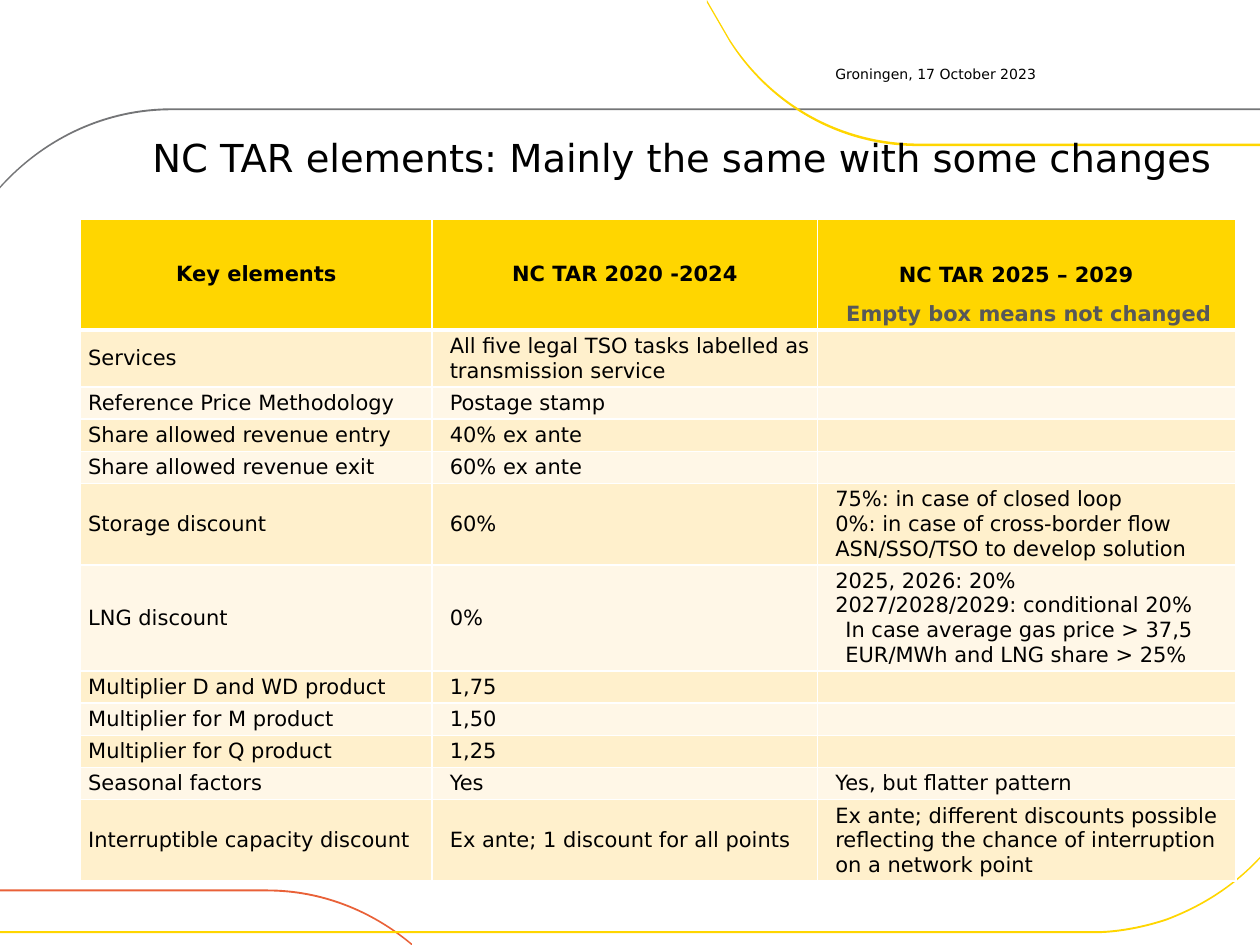
from lxml.etree import SubElement
from pptx import Presentation
from pptx.dml.color import RGBColor
from pptx.enum.text import MSO_ANCHOR, PP_ALIGN
from pptx.oxml.ns import qn
from pptx.util import Inches, Pt

FONT = "DejaVu Sans"
BLACK = RGBColor(0x00, 0x00, 0x00)
WHITE = RGBColor(0xFF, 0xFF, 0xFF)
GREY = RGBColor(0x74, 0x75, 0x77)
DARK_GREY = RGBColor(0x57, 0x58, 0x59)
YELLOW = RGBColor(0xFF, 0xD6, 0x00)
ORANGE = RGBColor(0xE9, 0x61, 0x38)
BAND_DARK = RGBColor(0xFF, 0xF0, 0xCC)
BAND_LIGHT = RGBColor(0xFF, 0xF7, 0xE7)

presentation = Presentation()
presentation.slide_width = Inches(10)
presentation.slide_height = Inches(7.5)
slide = presentation.slides.add_slide(presentation.slide_layouts[6])


def write_text(frame, text, size=12, color=BLACK, bold=False, align=PP_ALIGN.LEFT,
               indent=0, space_after=0, new=False):
    """Write one paragraph, either the first of the frame or a new one."""
    paragraph = frame.add_paragraph() if new else frame.paragraphs[0]
    paragraph.alignment = align
    paragraph.space_after = Pt(space_after)
    paragraph._p.get_or_add_pPr().set("marL", str(Inches(indent)))
    if text:
        run = paragraph.add_run()
        run.text = text
        run.font.name = FONT
        run.font.size = Pt(size)
        run.font.bold = bold
        run.font.color.rgb = color
    else:
        # Small enough that an empty cell does not stretch its row
        paragraph._p.get_or_add_endParaRPr().set("sz", "1000")


def draw_ribbon(edge, thickness, color):
    """Fill a thin band below an edge of Bezier curves (a start, then point triples)."""
    outline = edge + [(x, y + thickness) for x, y in reversed(edge)]
    points = [(Inches(x), Inches(y)) for x, y in outline]
    builder = slide.shapes.build_freeform(*points[0])
    builder.add_line_segments(points[1:], close=True)
    shape = builder.convert_to_shape()
    shape.shadow.inherit = False
    shape.fill.solid()
    shape.fill.fore_color.rgb = color
    shape.line.fill.background()
    # Join the line segments by threes into curves, except the turn at the far end
    segments = list(shape._element.iter(qn("a:lnTo")))
    turn = len(edge) - 1
    for first in [*range(0, turn, 3), *range(turn + 1, 2 * turn + 1, 3)]:
        segments[first].tag = qn("a:cubicBezTo")
        for segment in segments[first + 1:first + 3]:
            segments[first].append(segment[0])
            segment.getparent().remove(segment)


# Decorative curves at the top and bottom
draw_ribbon([(0, 1.48), (0.36, 1.08), (0.85, 0.86), (1.36, 0.86),
             (10, 0.86), (10, 0.86), (10, 0.86)], 0.015, GREY)
draw_ribbon([(5.61, 0), (5.79, 0.31), (5.79, 0.31), (5.79, 0.31),
             (6.12, 0.83), (6.68, 1.14), (7.29, 1.14),
             (10, 1.14), (10, 1.14), (10, 1.14)], 0.02, YELLOW)
draw_ribbon([(0, 7.06), (2.12, 7.06), (2.12, 7.06), (2.12, 7.06),
             (2.55, 7.06), (2.95, 7.22), (3.27, 7.49)], 0.015, ORANGE)
draw_ribbon([(0, 7.39), (8.73, 7.39), (8.73, 7.39), (8.73, 7.39),
             (8.73, 7.39), (8.96, 7.39), (9.26, 7.29),
             (9.47, 7.21), (9.75, 7.07), (10, 6.8)], 0.015, YELLOW)

# Table content: each cell is one text, or a list of (text, indent) paragraphs
header = ["Key elements", "NC TAR 2020 -2024", "NC TAR 2025 – 2029"]
rows = [
    ("Services", "All five legal TSO tasks labelled as transmission service", ""),
    ("Reference Price Methodology", "Postage stamp", ""),
    ("Share allowed revenue entry", "40% ex ante", ""),
    ("Share allowed revenue exit", "60% ex ante", ""),
    ("Storage discount", "60%", [("75%: in case of closed loop", 0.08),
                                 ("0%: in case of cross-border flow", 0.08),
                                 ("ASN/SSO/TSO to develop solution", 0.08)]),
    ("LNG discount", "0%", [("2025, 2026: 20%", 0.08),
                            ("2027/2028/2029: conditional 20%", 0.08),
                            ("In case average gas price > 37,5 EUR/MWh and LNG share > 25%", 0.16)]),
    ("Multiplier D and WD product", "1,75", ""),
    ("Multiplier for M product", "1,50", ""),
    ("Multiplier for Q product", "1,25", ""),
    ("Seasonal factors", "Yes", "Yes, but flatter pattern"),
    ("Interruptible capacity discount", "Ex ante; 1 discount for all points",
     "Ex ante; different discounts possible reflecting the chance of interruption on a network point"),
]
column_widths = [2.79, 3.06, 3.32]
row_heights = [0.88, 0.45, 0.25, 0.25, 0.25, 0.64, 0.84, 0.25, 0.25, 0.25, 0.25, 0.64]

table = slide.shapes.add_table(len(row_heights), len(column_widths), Inches(0.64), Inches(1.74),
                               Inches(sum(column_widths)), Inches(sum(row_heights))).table
for column, width in zip(table.columns, column_widths):
    column.width = Inches(width)
for row, height in zip(table.rows, row_heights):
    row.height = Inches(height)

for row_index, texts in enumerate([header, *rows]):
    for column_index, content in enumerate(texts):
        cell = table.cell(row_index, column_index)
        cell.vertical_anchor = MSO_ANCHOR.MIDDLE
        cell.margin_left = cell.margin_right = Inches(0.06)
        cell.margin_top = cell.margin_bottom = Inches(0.03)

        # White borders, heavier below the header
        properties = cell._tc.get_or_add_tcPr()
        for side in ("L", "R", "T", "B"):
            heavy = (row_index, side) in ((0, "B"), (1, "T"))
            border = SubElement(properties, qn(f"a:ln{side}"), w=str(Pt(3 if heavy else 1)))
            fill = SubElement(border, qn("a:solidFill"))
            SubElement(fill, qn("a:srgbClr"), val=str(WHITE))

        cell.fill.solid()
        if row_index == 0:
            cell.fill.fore_color.rgb = YELLOW
            write_text(cell.text_frame, content, bold=True, align=PP_ALIGN.CENTER,
                       space_after=8 if column_index == 2 else 0)
            continue
        cell.fill.fore_color.rgb = BAND_DARK if row_index % 2 else BAND_LIGHT
        if isinstance(content, str):
            content = [(content, 0.08 if column_index else 0)]
        for number, (text, indent) in enumerate(content):
            write_text(cell.text_frame, text, indent=indent, new=number > 0)

# Note under the last column heading
note_cell = table.cell(0, 2)
note_cell.vertical_anchor = MSO_ANCHOR.BOTTOM
note_cell.margin_left = 0
note_cell.margin_right = Inches(0.17)
note_cell.margin_bottom = Inches(0.03)
write_text(note_cell.text_frame, "Empty box means not changed", color=DARK_GREY, bold=True,
           align=PP_ALIGN.CENTER, indent=0.2, new=True)

# Title and date
for text, size, left, top, width, height in [
    ("NC TAR elements: Mainly the same with some changes", 22, 1.21, 1.06, 8.7, 0.81),
    ("Groningen, 17 October 2023", 8, 6.63, 0.52, 1.87, 0.2),
]:
    frame = slide.shapes.add_textbox(Inches(left), Inches(top), Inches(width),
                                     Inches(height)).text_frame
    frame.word_wrap = True
    frame.margin_left = frame.margin_right = frame.margin_top = frame.margin_bottom = 0
    write_text(frame, text, size=size)

presentation.save("out.pptx")
